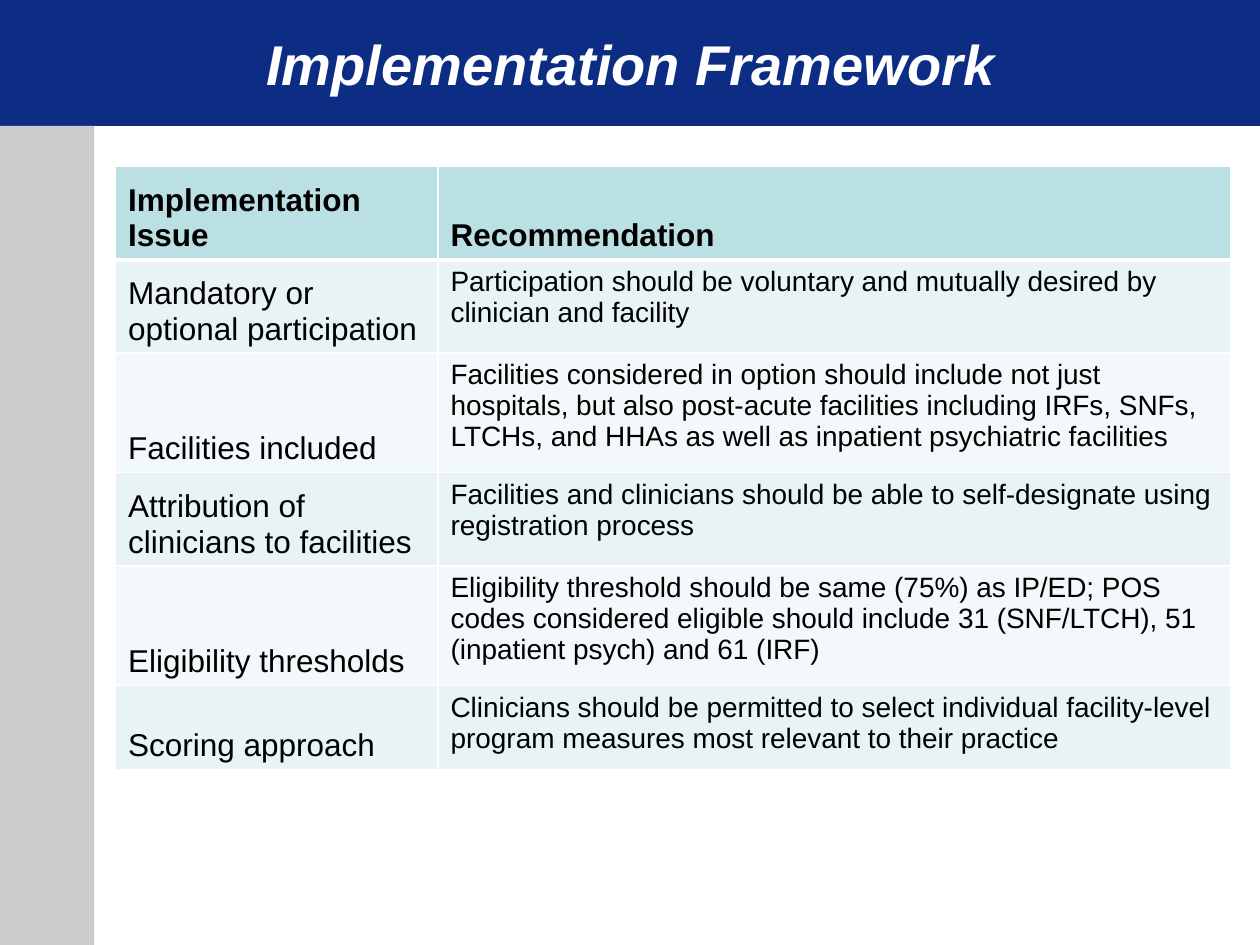
import pptx
import pptx.dml.color
import pptx.enum.shapes
import pptx.enum.text
import pptx.oxml
import pptx.oxml.ns
import pptx.util
from pptx.util import Cm

ANCHOR = pptx.enum.text.MSO_ANCHOR
HEADINGS = ("Implementation Issue", "Recommendation")
RECOMMENDATIONS = [
    ("Mandatory or optional participation",
     "Participation should be voluntary and mutually desired by clinician and facility"),
    ("Facilities included",
     "Facilities considered in option should include not just hospitals, but also "
     "post-acute facilities including IRFs, SNFs, LTCHs, and HHAs as well as "
     "inpatient psychiatric facilities"),
    ("Attribution of clinicians to facilities",
     "Facilities and clinicians should be able to self-designate using registration process"),
    ("Eligibility thresholds",
     "Eligibility threshold should be same (75%) as IP/ED; POS codes considered eligible "
     "should include 31 (SNF/LTCH), 51 (inpatient psych) and 61 (IRF)"),
    ("Scoring approach",
     "Clinicians should be permitted to select individual facility-level program measures "
     "most relevant to their practice"),
]
COLUMN_WIDTHS = (6.5, 15.98)
ROW_HEIGHTS = (1.88, 1.88, 2.41, 1.88, 2.41, 1.7)


def rgb(value):
    return pptx.dml.color.RGBColor.from_string(value)


class FrameworkSlide:
    font = "Arial"
    navy, grey, white, black = "0C2D83", "CCCCCC", "FFFFFF", "000000"
    header_fill, band_fills = "BBE0E3", ("E7F3F4", "F3F9FA")

    def __init__(self, slide):
        self.slide = slide

    def set_text(self, frame, text, size, color, bold=False, italic=False):
        frame.text = text
        font = frame.paragraphs[0].runs[0].font
        font.name = self.font
        font.size = pptx.util.Pt(size)
        font.bold = bold
        font.italic = italic
        font.color.rgb = rgb(color)

    def panel(self, left, top, width, height, color):
        panel = self.slide.shapes.add_shape(
            pptx.enum.shapes.MSO_SHAPE.RECTANGLE, Cm(left), Cm(top), Cm(width), Cm(height))
        panel.shadow.inherit = False
        panel.fill.solid()
        panel.fill.fore_color.rgb = rgb(color)
        panel.line.fill.background()

    def title(self, text, left, top, width, height):
        frame = self.slide.shapes.add_textbox(
            Cm(left), Cm(top), Cm(width), Cm(height)).text_frame
        frame.word_wrap = True
        frame.vertical_anchor = ANCHOR.MIDDLE
        self.set_text(frame, text, 32, self.white, bold=True, italic=True)
        frame.paragraphs[0].alignment = pptx.enum.text.PP_ALIGN.CENTER

    def border(self, cell, side, points):
        properties = cell._tc.get_or_add_tcPr()
        properties.append(pptx.oxml.parse_xml(
            f'<a:ln{side} {pptx.oxml.ns.nsdecls("a")} w="{pptx.util.Pt(points)}">'
            f'<a:solidFill><a:srgbClr val="{self.white}"/></a:solidFill></a:ln{side}>'))

    def cell(self, cell, text, row, column):
        is_header = row == 0
        is_issue = column == 0
        rules = {"L": 1, "R": 1, "T": 3 if row == 1 else 1, "B": 3 if is_header else 1}
        for side, points in rules.items():
            self.border(cell, side, points)
        cell.fill.solid()
        cell.fill.fore_color.rgb = rgb(
            self.header_fill if is_header else self.band_fills[(row - 1) % 2])
        cell.vertical_anchor = ANCHOR.BOTTOM if is_header or is_issue else ANCHOR.TOP
        size = 18 if is_header or is_issue else 16
        self.set_text(cell.text_frame, text, size, self.black, bold=is_header)

    def table(self, rows, left, top, widths, heights):
        table = self.slide.shapes.add_table(
            len(rows), len(widths), Cm(left), Cm(top),
            Cm(sum(widths)), Cm(sum(heights))).table
        for column, width in zip(table.columns, widths):
            column.width = Cm(width)
        for row, height in zip(table.rows, heights):
            row.height = Cm(height)
        for row, texts in enumerate(rows):
            for column, text in enumerate(texts):
                self.cell(table.cell(row, column), text, row, column)


def main():
    deck = pptx.Presentation()
    deck.slide_width, deck.slide_height = Cm(25.4), Cm(19.05)
    framework = FrameworkSlide(deck.slides.add_slide(deck.slide_layouts[6]))
    framework.panel(0, 0, 25.4, 2.54, framework.navy)
    framework.panel(0, 2.54, 1.9, 16.51, framework.grey)
    framework.title("Implementation Framework", 2.33, 0, 20.78, 2.54)
    framework.table([HEADINGS, *RECOMMENDATIONS], 2.33, 3.36, COLUMN_WIDTHS, ROW_HEIGHTS)
    deck.save("out.pptx")


if __name__ == "__main__":
    main()
